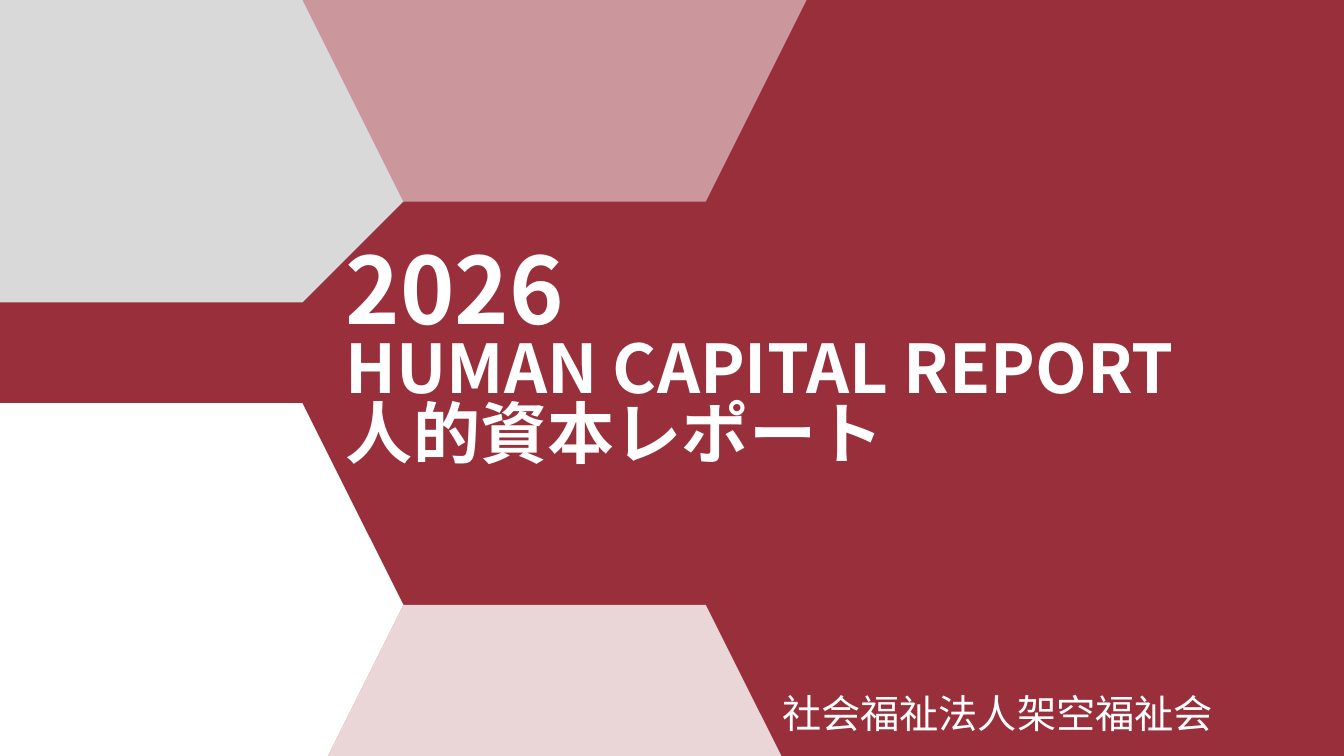
"""Cover slide of a human capital report: hexagon motif, title and publisher."""
from pptx import Presentation
from pptx.dml.color import RGBColor
from pptx.enum.shapes import MSO_SHAPE
from pptx.enum.text import MSO_ANCHOR
from pptx.oxml.ns import qn
from pptx.util import Inches, Pt
from lxml import etree

RECT = MSO_SHAPE.RECTANGLE
MIDDLE = MSO_ANCHOR.MIDDLE
FONT = "Noto Sans CJK JP"
COLORS = {"wine": "992F3A", "gray": "D9D9D9", "white": "FFFFFF"}
W, H = 13.33, 7.5

TITLE = [("2026", 66), ("HUMAN CAPITAL REPORT", 48), ("人的資本レポート", 48)]
OWNER = [("社会福祉法人架空福祉会", 28)]

EDGE, TIP = 2.78, 3.62
OUT, IN = (3.22, 7.55), (3.99, 6.78)
SIDES = [(0, 3.36, "gray"), (3.75, H, "white")]
CAPS = [(H, 5.67, 80), (0, 1.54, 50)]


def paint(shape, color, alpha=100):
    shape.shadow.inherit = False
    shape.line.fill.background()
    shape.fill.solid()
    shape.fill.fore_color.rgb = RGBColor.from_string(COLORS[color])
    if alpha < 100:
        tone = shape.fill._xPr.find(".//" + qn("a:srgbClr"))
        etree.SubElement(tone, qn("a:alpha"), val=str(alpha * 1000))


def draw(slide, points, color, alpha=100):
    path = slide.shapes.build_freeform(*points[0], scale=Inches(1))
    path.add_line_segments(points[1:], close=True)
    paint(path.convert_to_shape(), color, alpha)


def write(slide, box, lines, bold, gap):
    frame = slide.shapes.add_textbox(*map(Inches, box)).text_frame
    frame.word_wrap = True
    frame.vertical_anchor = MIDDLE
    frame.text = "\n".join(text for text, size in lines)
    for para, (text, size) in zip(frame.paragraphs, lines):
        para.line_spacing = gap
        for run in para.runs:
            font = run.font
            font.name, font.size, font.bold = FONT, Pt(size), bold
            font.color.rgb = RGBColor.from_string(COLORS["white"])
            east = etree.SubElement(run._r.get_or_add_rPr(), qn("a:ea"))
            east.set("typeface", FONT)


def main():
    deck = Presentation()
    deck.slide_width, deck.slide_height = Inches(W), Inches(H)
    slide = deck.slides.add_slide(deck.slide_layouts[6])
    paint(slide.shapes.add_shape(RECT, 0, 0, Inches(W), Inches(H)), "wine")
    for top, base, color in SIDES:
        mid = (top + base) / 2
        draw(slide, [(0, top), (EDGE, top), (TIP, mid), (EDGE, base), (0, base)], color)
    for wide, slim, alpha in CAPS:
        draw(slide, [(OUT[0], wide), (OUT[1], wide), (IN[1], slim), (IN[0], slim)],
             "white", alpha)
    write(slide, (W / 4, 1.52, W * 0.75, 4.15), TITLE, True, 0.8)
    write(slide, (7.66, 6.66, W - 7.66, 0.83), OWNER, False, 1.0)
    deck.save("out.pptx")


if __name__ == "__main__":
    main()
